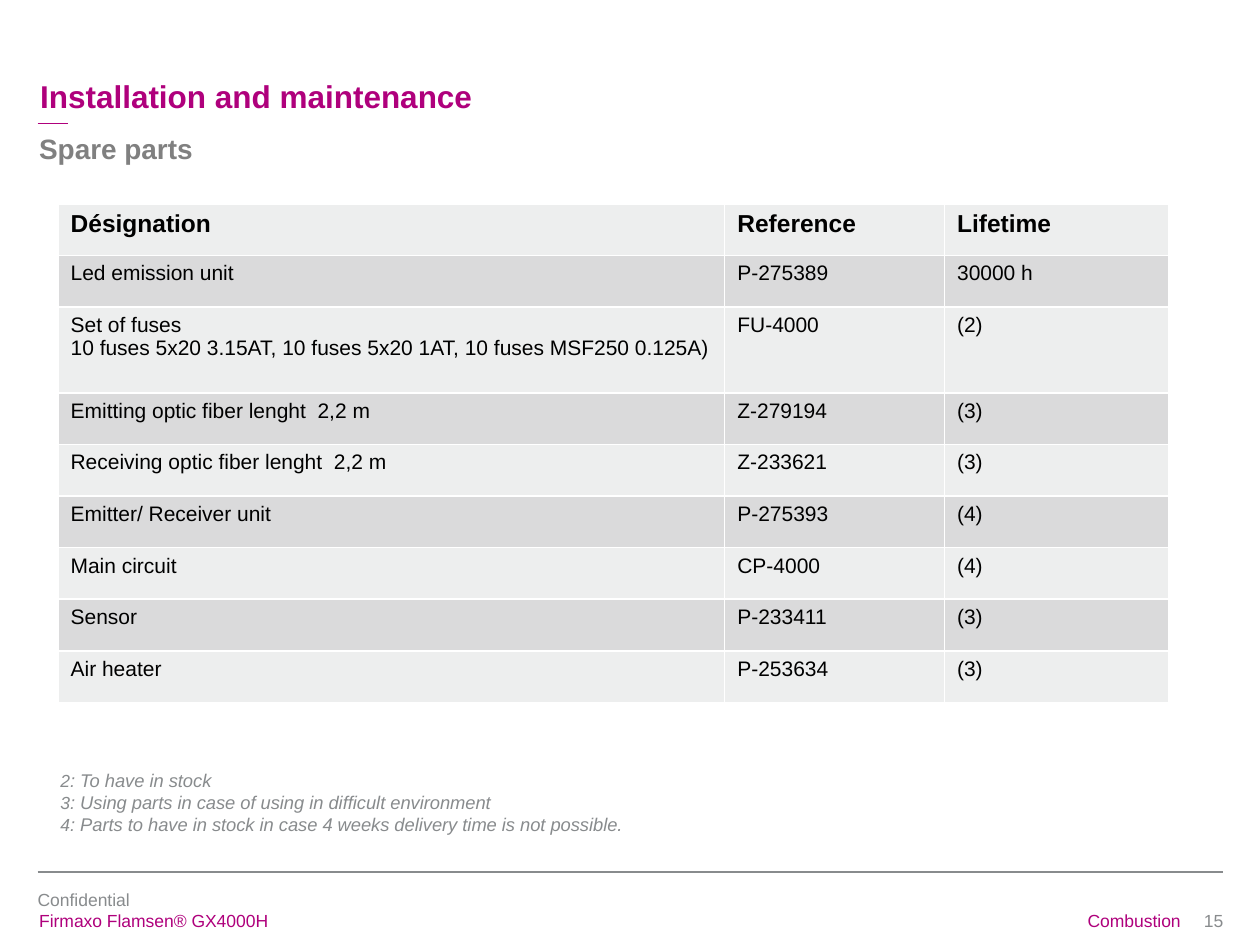
from pptx import Presentation
from pptx.dml.color import RGBColor as Rgb
from pptx.enum.shapes import MSO_CONNECTOR as Link
from pptx.enum.text import MSO_ANCHOR as Anchor, PP_ALIGN as Align
from pptx.oxml.ns import qn
from pptx.util import Cm, Pt
from lxml.etree import SubElement as Sub

HUES = {"plum": "AF007C", "gray": "888B8D", "mid": "808080",
        "black": "000000", "light": "EDEEEE", "dark": "DADADB"}

PARTS = [
    ("Désignation", "Reference", "Lifetime"),
    ("Led emission unit", "P-275389", "30000 h"),
    ("Set of fuses\n10 fuses 5x20 3.15AT, 10 fuses 5x20 1AT, 10 fuses MSF250 0.125A)",
     "FU-4000", "(2)"),
    ("Emitting optic fiber lenght  2,2 m", "Z-279194", "(3)"),
    ("Receiving optic fiber lenght  2,2 m", "Z-233621", "(3)"),
    ("Emitter/ Receiver unit", "P-275393", "(4)"),
    ("Main circuit", "CP-4000", "(4)"),
    ("Sensor", "P-233411", "(3)"),
    ("Air heater", "P-253634", "(3)"),
]

NOTES = [
    ("2", ": To have in stock"),
    ("3", ": Using parts in case of using in difficult environment"),
    ("4", ": Parts to have in stock in case 4 weeks delivery time is not possible."),
]


class Deck:
    def __init__(self, slide, face="Arial"):
        self.slide = slide
        self.face = face

    def hue(self, name):
        return Rgb.from_string(HUES[name])

    def style(self, font, size, hue, bold=False, italic=False):
        font.name = self.face
        font.size = Pt(size)
        font.color.rgb = self.hue(hue)
        font.bold = bold
        font.italic = italic

    def frame(self, x, y, w, h):
        box = self.slide.shapes.add_textbox(Cm(x), Cm(y), Cm(w), Cm(h))
        box.text_frame.word_wrap = True
        return box.text_frame

    def text(self, x, y, w, h, words, size, hue, bold=False,
             align=Align.LEFT, anchor=Anchor.TOP, space=1.0):
        frame = self.frame(x, y, w, h)
        frame.margin_left = frame.margin_right = 0
        frame.margin_top = frame.margin_bottom = 0
        frame.vertical_anchor = anchor
        para = frame.paragraphs[0]
        para.text = words
        para.alignment = align
        para.line_spacing = space
        self.style(para.font, size, hue, bold)

    def notes(self, x, y, w, h, items):
        frame = self.frame(x, y, w, h)
        for i, (mark, words) in enumerate(items):
            para = frame.add_paragraph() if i else frame.paragraphs[0]
            for part, size in ((mark, 10), (words, 10.5)):
                run = para.add_run()
                run.text = part
                self.style(run.font, size, "gray", italic=True)

    def rule(self, x, y, end, hue):
        line = self.slide.shapes.add_connector(
            Link.STRAIGHT, Cm(x), Cm(y), Cm(end), Cm(y))
        line.line.color.rgb = self.hue(hue)
        line.line.width = Pt(1)
        Sub(line._element.spPr, qn("a:effectLst"))

    def table(self, x, y, cols, rows, data):
        grid = self.slide.shapes.add_table(
            len(rows), len(cols), Cm(x), Cm(y),
            Cm(sum(cols)), Cm(sum(rows))).table
        for col, width in zip(grid.columns, cols):
            col.width = Cm(width)
        for i, (row, high, line) in enumerate(zip(grid.rows, rows, data)):
            row.height = Cm(high)
            for cell, words in zip(row.cells, line):
                cell.text = words
                cell.fill.solid()
                cell.fill.fore_color.rgb = self.hue("dark" if i % 2 else "light")
                for para in cell.text_frame.paragraphs:
                    self.style(para.font, 12 if i else 14, "black", bold=not i)


def main():
    pres = Presentation()
    pres.slide_width, pres.slide_height = Cm(25.4), Cm(19.05)
    deck = Deck(pres.slides.add_slide(pres.slide_layouts[6]))

    deck.text(0.76, 17.93, 7.57, 0.43, "Confidential", 10, "gray")
    deck.text(18.54, 18.34, 5.26, 0.43, "Combustion", 10, "plum", align=Align.RIGHT)
    deck.rule(0.76, 17.58, 24.66, "gray")
    deck.rule(0.76, 2.49, 1.37, "plum")
    deck.text(0.79, 18.34, 11.13, 0.5, "Firmaxo Flamsen® GX4000H", 10, "plum")
    deck.text(23.9, 18.34, 0.76, 0.5, "15", 10, "gray", align=Align.RIGHT)

    deck.text(0.81, 0.74, 19.84, 1.6, "Installation and maintenance", 18, "plum",
              bold=True, anchor=Anchor.BOTTOM, space=0.95)
    deck.text(0.79, 2.62, 19.89, 1.04, "Spare parts", 16, "mid",
              bold=True, space=1.05)

    rows = [1.04] * len(PARTS)
    rows[2] = 1.73
    deck.table(1.17, 4.11, [13.44, 4.43, 4.53], rows, PARTS)
    deck.notes(0.97, 15.39, 17.63, 1.6, NOTES)
    pres.save("out.pptx")


if __name__ == "__main__":
    main()
